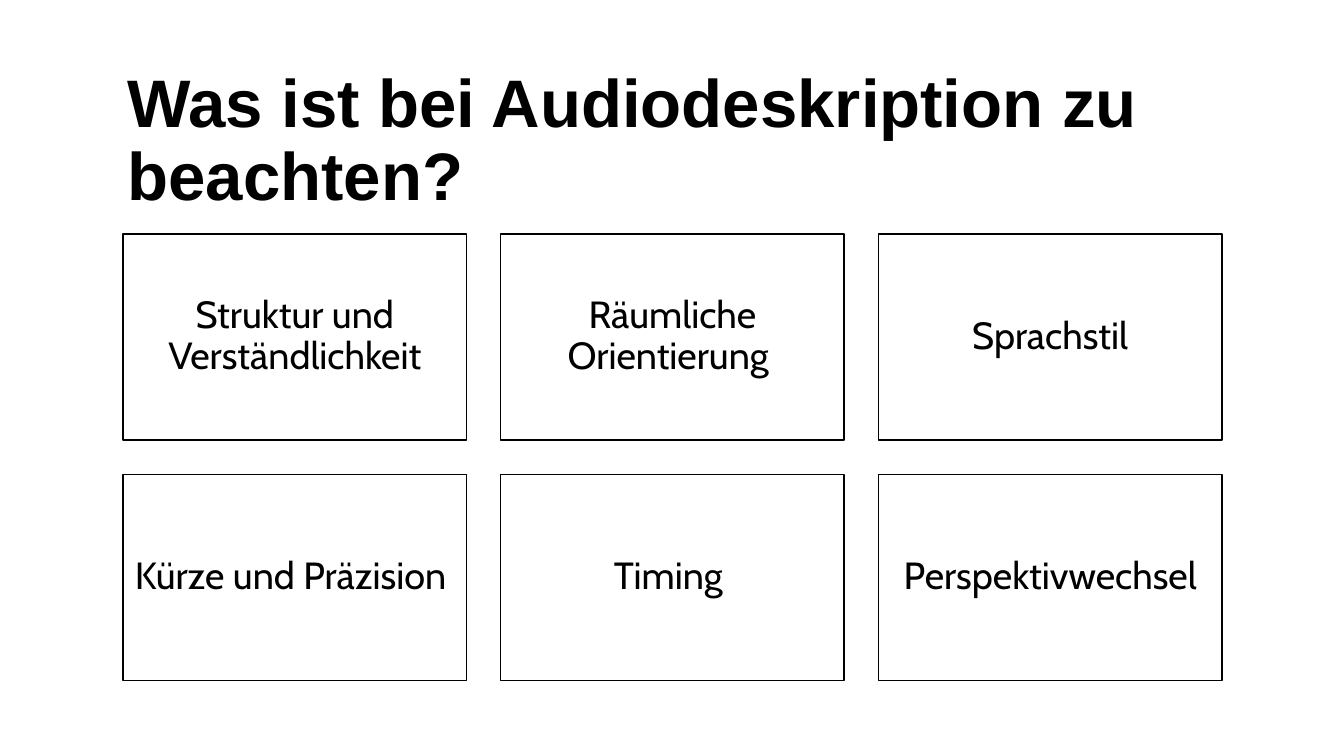
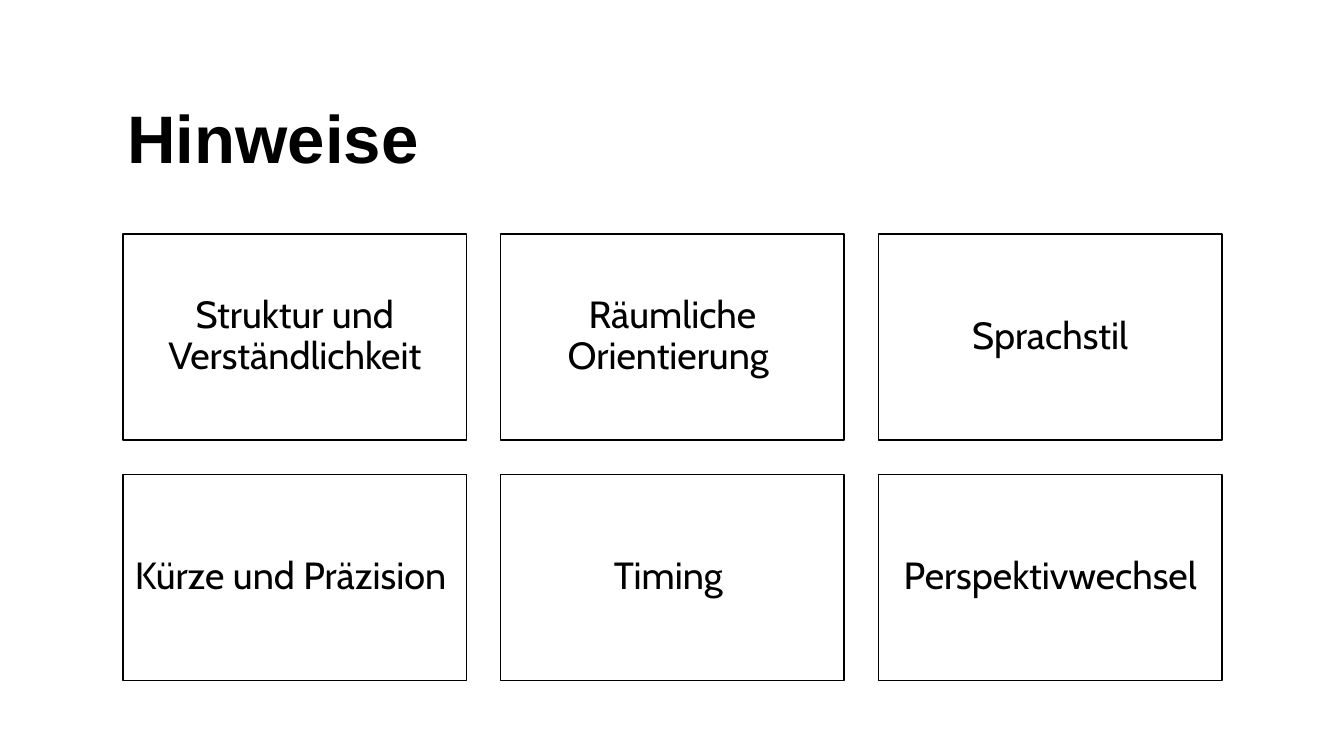
"""Build two slides that show a title above a grid of six topic boxes."""
from dataclasses import dataclass

from pptx import Presentation
from pptx.dml.color import RGBColor
from pptx.enum.shapes import MSO_SHAPE
from pptx.enum.text import MSO_ANCHOR as Anchor, PP_ALIGN as Align
from pptx.slide import Slide
from pptx.text.text import TextFrame
from pptx.util import Pt

COLOURS = {"paper": "FFFFFF", "ink": "000000"}
LINE_SPACING = 0.9
COLUMNS = 3
GRID_LEFT, GRID_TOP = 87.9, 167.1
BOX_WIDTH, BOX_HEIGHT, GAP = 245.3, 147.2, 24.5
BOX_INSET = 7.6
TITLES = ["Was ist bei Audiodeskription zu beachten?", "Hinweise"]
TOPICS = [
    "Struktur und Verständlichkeit",
    "Räumliche Orientierung ",
    "Sprachstil",
    "Kürze und Präzision ",
    "Timing ",
    "Perspektivwechsel",
]


@dataclass(frozen=True)
class TextStyle:
    font: str
    size: float
    bold: bool
    align: Align


@dataclass(frozen=True)
class TopicBox:
    text: str
    left: float
    top: float


TITLE_STYLE = TextStyle("Arial", 48, True, Align.LEFT)
TOPIC_STYLE = TextStyle("Cabin", 27, False, Align.CENTER)


def colour(name: str) -> RGBColor:
    return RGBColor.from_string(COLOURS[name])


def write_text(frame: TextFrame, text: str, style: TextStyle) -> None:
    frame.word_wrap = True
    frame.vertical_anchor = Anchor.MIDDLE
    paragraph = frame.paragraphs[0]
    paragraph.text = text
    paragraph.alignment = style.align
    paragraph.line_spacing = LINE_SPACING
    font = paragraph.font
    font.name, font.size, font.bold = style.font, Pt(style.size), style.bold
    font.color.rgb = colour("ink")


def add_title(slide: Slide, text: str) -> None:
    shape = slide.shapes.add_textbox(Pt(84), Pt(38), Pt(792), Pt(127))
    write_text(shape.text_frame, text, TITLE_STYLE)


def add_topic_box(slide: Slide, box: TopicBox) -> None:
    shape = slide.shapes.add_shape(
        MSO_SHAPE.RECTANGLE, Pt(box.left), Pt(box.top), Pt(BOX_WIDTH), Pt(BOX_HEIGHT)
    )
    shape.shadow.inherit = False
    shape.fill.background()
    shape.line.color.rgb = colour("ink")
    shape.line.width = Pt(1)
    frame = shape.text_frame
    frame.margin_left = frame.margin_right = Pt(BOX_INSET)
    frame.margin_top = frame.margin_bottom = Pt(BOX_INSET)
    write_text(frame, box.text, TOPIC_STYLE)


def topic_grid(topics: list[str]) -> list[TopicBox]:
    boxes = []
    for index, topic in enumerate(topics):
        row, column = divmod(index, COLUMNS)
        left = GRID_LEFT + column * (BOX_WIDTH + GAP)
        top = GRID_TOP + row * (BOX_HEIGHT + GAP)
        boxes.append(TopicBox(topic, left, top))
    return boxes


def main() -> None:
    presentation = Presentation()
    presentation.slide_width, presentation.slide_height = Pt(960), Pt(540)
    for title in TITLES:
        slide = presentation.slides.add_slide(presentation.slide_layouts[6])
        slide.background.fill.solid()
        slide.background.fill.fore_color.rgb = colour("paper")
        add_title(slide, title)
        for box in topic_grid(TOPICS):
            add_topic_box(slide, box)
    presentation.save("out.pptx")


if __name__ == "__main__":
    main()
